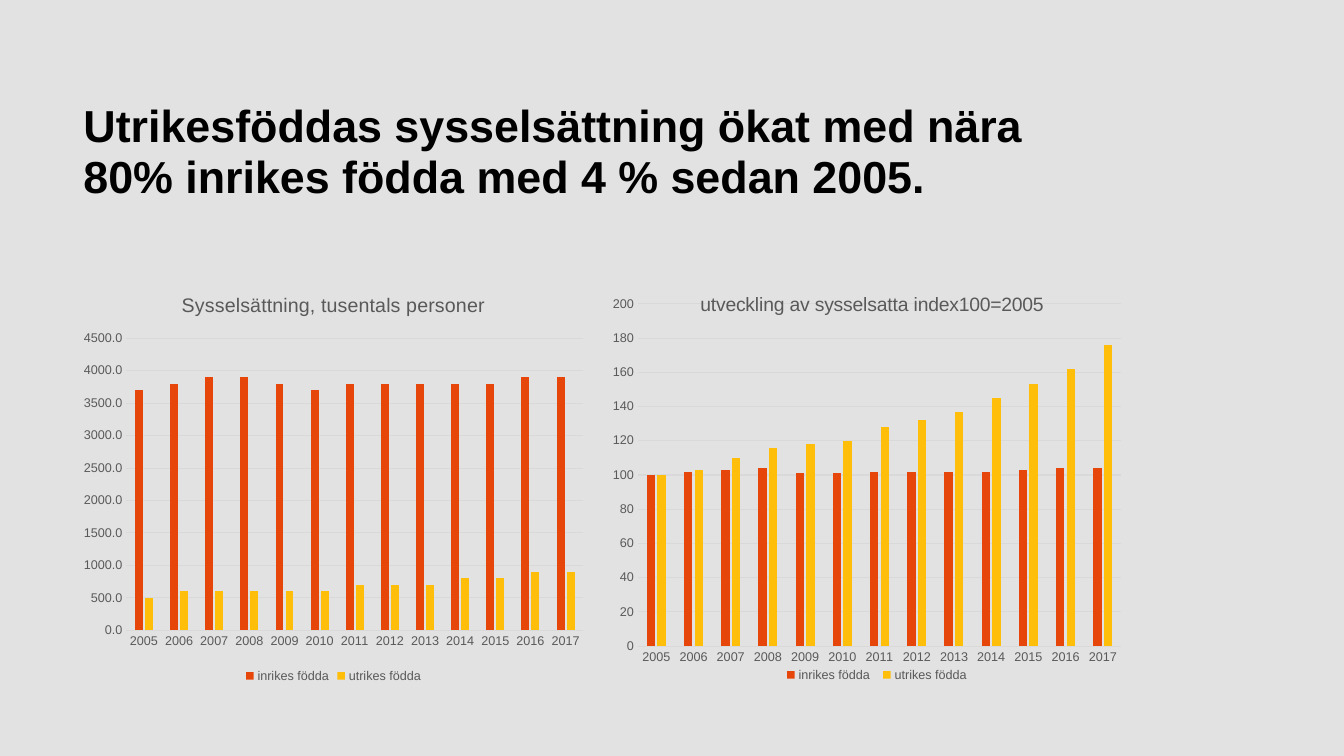
import pptx
import pptx.util
import pptx.dml.color
import pptx.chart.data
import pptx.enum.chart
import pptx.enum.text
import pptx.oxml

Pt = pptx.util.Pt
COLORS = {"background": "E2E2E2", "heading": "000000", "label": "595959",
          "grid": "D9D9D9", "inrikes födda": "E6460A", "utrikes födda": "FFBE0A"}

heading = "Utrikesföddas sysselsättning ökat med nära 80% inrikes födda med 4 % sedan 2005."
years = [str(year) for year in range(2005, 2018)]
panels = [
    {"title": "Sysselsättning, tusentals personer", "title_size": 14, "number_format": "0.0",
     "maximum": 4500, "step": 500, "plot": None, "legend": None,
     "series": {
         "inrikes födda": [3700, 3800, 3900, 3900, 3800, 3700, 3800, 3800, 3800, 3800, 3800, 3900, 3900],
         "utrikes födda": [500, 600, 600, 600, 600, 600, 700, 700, 700, 800, 800, 900, 900]}},
    {"title": "utveckling av sysselsatta index100=2005", "title_size": 13.8,
     "number_format": "General", "maximum": 200, "step": 20,
     "plot": {"x": 0.05, "y": 0.07, "w": 0.93, "h": 0.83},
     "legend": {"x": 0.32, "y": 0.94, "w": 0.38, "h": 0.06},
     "series": {
         "inrikes födda": [100, 102, 103, 104, 101, 101, 102, 102, 102, 102, 103, 104, 104],
         "utrikes födda": [100, 103, 110, 116, 118, 120, 128, 132, 137, 145, 153, 162, 176]}},
]

LEFT, HEADING_TOP, HEADING_WIDTH, HEADING_HEIGHT = 52.5, 69, 757, 97
PANEL_TOP, PANEL_WIDTH, PANEL_HEIGHT, PANEL_GAP = 196.5, 371.5, 294.5, 13


def rgb(name):
    return pptx.dml.color.RGBColor.from_string(COLORS[name])


def apply(target, values):
    for name, value in values.items():
        setattr(target, name, value)


def style_font(font, size, color, bold=False):
    apply(font, {"name": "Arial", "size": Pt(size), "bold": bold})
    font.color.rgb = rgb(color)


def style_line(line):
    line.color.rgb = rgb("grid")
    line.width = Pt(0.75)


def place(part, position, shares, target=""):
    for layout in part.xpath("c:layout"):
        part.remove(layout)
    modes = "".join(f'<c:{axis}Mode val="edge"/>' for axis in "xy")
    sizes = "".join(f'<c:{side} val="{share}"/>' for side, share in shares.items())
    part.insert(position, pptx.oxml.parse_xml(
        '<c:layout xmlns:c="http://schemas.openxmlformats.org/drawingml/2006/chart">'
        f'<c:manualLayout>{target}{modes}{sizes}</c:manualLayout></c:layout>'))


def add_panel(slide, index, panel):
    data = pptx.chart.data.CategoryChartData()
    data.categories = years
    for name, values in panel["series"].items():
        data.add_series(name, values)
    left = LEFT + index * (PANEL_WIDTH + PANEL_GAP)
    chart = slide.shapes.add_chart(
        pptx.enum.chart.XL_CHART_TYPE.COLUMN_CLUSTERED, Pt(left), Pt(PANEL_TOP),
        Pt(PANEL_WIDTH), Pt(PANEL_HEIGHT), data).chart
    style_font(chart.font, 10, "heading")

    chart.has_title = True
    chart.chart_title.text_frame.text = panel["title"]
    style_font(chart.chart_title.text_frame.paragraphs[0].runs[0].font,
               panel["title_size"], "label")
    chart.chart_title.include_in_layout = False

    chart.has_legend = True
    apply(chart.legend, {"position": pptx.enum.chart.XL_LEGEND_POSITION.BOTTOM,
                         "include_in_layout": False})
    style_font(chart.legend.font, 9, "label")

    no_tick = pptx.enum.chart.XL_TICK_MARK.NONE
    for axis in (chart.category_axis, chart.value_axis):
        apply(axis, {"major_tick_mark": no_tick, "minor_tick_mark": no_tick})
        style_font(axis.tick_labels.font, 9, "label")
    style_line(chart.category_axis.format.line)
    apply(chart.value_axis, {"minimum_scale": 0, "maximum_scale": panel["maximum"],
                             "major_unit": panel["step"], "has_major_gridlines": True})
    chart.value_axis.format.line.fill.background()
    style_line(chart.value_axis.major_gridlines.format.line)
    apply(chart.value_axis.tick_labels, {"number_format": panel["number_format"],
                                         "number_format_is_linked": False})

    apply(chart.plots[0], {"gap_width": 219, "overlap": -27, "vary_by_categories": False})
    for series in chart.plots[0].series:
        series.format.fill.solid()
        series.format.fill.fore_color.rgb = rgb(series.name)
    if panel["plot"]:
        place(chart._chartSpace.chart.plotArea, 0, panel["plot"],
              '<c:layoutTarget val="inner"/>')
    if panel["legend"]:
        place(chart.legend._element, 1, panel["legend"])


def main():
    deck = pptx.Presentation()
    apply(deck, {"slide_width": Pt(960), "slide_height": Pt(540)})
    slide = deck.slides.add_slide(deck.slide_layouts[6])
    slide.background.fill.solid()
    slide.background.fill.fore_color.rgb = rgb("background")

    frame = slide.shapes.add_textbox(Pt(LEFT), Pt(HEADING_TOP), Pt(HEADING_WIDTH),
                                     Pt(HEADING_HEIGHT)).text_frame
    apply(frame, {"word_wrap": True, "text": heading,
                  "vertical_anchor": pptx.enum.text.MSO_ANCHOR.TOP})
    frame.paragraphs[0].line_spacing = 0.95
    style_font(frame.paragraphs[0].runs[0].font, 32, "heading", bold=True)

    for index, panel in enumerate(panels):
        add_panel(slide, index, panel)
    deck.save("out.pptx")


if __name__ == "__main__":
    main()
